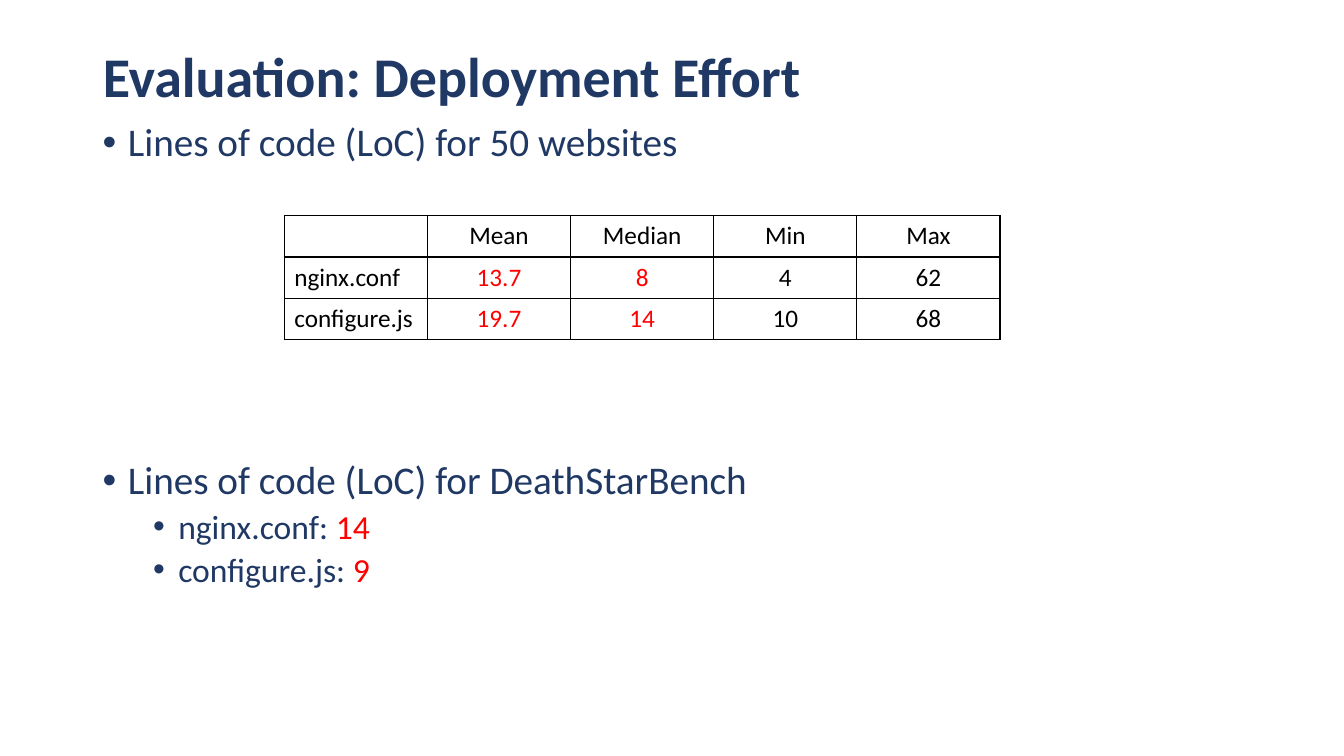
from dataclasses import dataclass

from lxml import etree
from pptx import Presentation
from pptx.dml.color import RGBColor
from pptx.enum.text import MSO_ANCHOR, PP_ALIGN
from pptx.oxml.ns import qn
from pptx.slide import Slide
from pptx.table import _Cell
from pptx.text.text import TextFrame, _Paragraph
from pptx.util import Inches, Pt

CENTER, LEFT = PP_ALIGN.CENTER, PP_ALIGN.LEFT
MIDDLE, TOP = MSO_ANCHOR.MIDDLE, MSO_ANCHOR.TOP

FONT = "Calibri"
COLORS = {"navy": "203864", "red": "FF0000", "black": "000000"}
TITLE_ONLY = 5
CONTENT_LEFT, CONTENT_WIDTH = 0.92, 11.5
COLUMN_WIDTH, ROW_HEIGHT = 1.42, 0.41


@dataclass(frozen=True)
class Bullet:
    text: str
    size: float
    indent: float
    space_before: float = 0
    value: str = ""


BULLETS = [
    Bullet("Lines of code (LoC) for 50 websites", 28, 0.25),
    # The large gap leaves room for the table.
    Bullet("Lines of code (LoC) for DeathStarBench", 28, 0.25, 211),
    Bullet("nginx.conf: ", 24, 0.75, 5, "14"),
    Bullet("configure.js: ", 24, 0.75, 5, "9"),
]

LOC_ROWS = [
    ["", "Mean", "Median", "Min", "Max"],
    ["nginx.conf", "13.7", "8", "4", "62"],
    ["configure.js", "19.7", "14", "10", "68"],
]
HIGHLIGHTED_COLUMNS = (1, 2)


def add_run(paragraph: _Paragraph, text: str, size: float, color: str, bold: bool = False) -> None:
    run = paragraph.add_run()
    run.text = text
    run.font.name = FONT
    run.font.size = Pt(size)
    run.font.bold = bold
    run.font.color.rgb = RGBColor.from_string(COLORS[color])


def add_title(slide: Slide, text: str) -> None:
    title = slide.shapes.title
    title.left, title.top = Inches(CONTENT_LEFT), Inches(0.4)
    title.width, title.height = Inches(CONTENT_WIDTH), Inches(0.77)
    frame = title.text_frame
    frame.word_wrap = True
    frame.vertical_anchor = MIDDLE
    paragraph = frame.paragraphs[0]
    paragraph.alignment = LEFT
    paragraph.line_spacing = 0.9
    add_run(paragraph, text, 40, "navy", bold=True)


def add_bullet(frame: TextFrame, bullet: Bullet, is_first: bool) -> None:
    paragraph = frame.paragraphs[0] if is_first else frame.add_paragraph()
    paragraph.line_spacing = 0.9
    paragraph.space_before = Pt(bullet.space_before)
    properties = paragraph._p.get_or_add_pPr()
    properties.set("marL", str(Inches(bullet.indent)))
    properties.set("indent", str(-Inches(0.25)))
    etree.SubElement(properties, qn("a:buFont"), typeface="Arial")
    etree.SubElement(properties, qn("a:buChar"), char="•")
    add_run(paragraph, bullet.text, bullet.size, "navy")
    if bullet.value:
        add_run(paragraph, bullet.value, bullet.size, "red")


def add_bullets(slide: Slide, bullets: list[Bullet]) -> None:
    body = slide.shapes.add_textbox(
        Inches(CONTENT_LEFT), Inches(1.17), Inches(CONTENT_WIDTH), Inches(6.12))
    frame = body.text_frame
    frame.word_wrap = True
    frame.vertical_anchor = TOP
    for index, bullet in enumerate(bullets):
        add_bullet(frame, bullet, index == 0)


def add_borders(cell: _Cell) -> None:
    properties = cell._tc.get_or_add_tcPr()
    for position, side in enumerate(("a:lnL", "a:lnR", "a:lnT", "a:lnB")):
        line = etree.Element(qn(side), w=str(Pt(1)))
        fill = etree.SubElement(line, qn("a:solidFill"))
        etree.SubElement(fill, qn("a:srgbClr"), val=COLORS["black"])
        properties.insert(position, line)


def add_loc_table(slide: Slide, rows: list[list[str]]) -> None:
    row_count, column_count = len(rows), len(rows[0])
    table = slide.shapes.add_table(
        row_count, column_count, Inches(2.82), Inches(2.14),
        Inches(COLUMN_WIDTH * column_count), Inches(ROW_HEIGHT * row_count)).table
    table.first_row = False
    table.horz_banding = False
    for column in table.columns:
        column.width = Inches(COLUMN_WIDTH)
    for row_index, values in enumerate(rows):
        table.rows[row_index].height = Inches(ROW_HEIGHT)
        for column_index, value in enumerate(values):
            cell = table.cell(row_index, column_index)
            cell.fill.background()
            add_borders(cell)
            paragraph = cell.text_frame.paragraphs[0]
            paragraph.alignment = CENTER if column_index else LEFT
            highlighted = row_index > 0 and column_index in HIGHLIGHTED_COLUMNS
            if value:
                add_run(paragraph, value, 18, "red" if highlighted else "black")


def main() -> None:
    presentation = Presentation()
    presentation.slide_width = Inches(13.33)
    presentation.slide_height = Inches(7.5)
    slide = presentation.slides.add_slide(presentation.slide_layouts[TITLE_ONLY])
    add_title(slide, "Evaluation: Deployment Effort")
    add_bullets(slide, BULLETS)
    add_loc_table(slide, LOC_ROWS)
    presentation.save("out.pptx")


if __name__ == "__main__":
    main()
